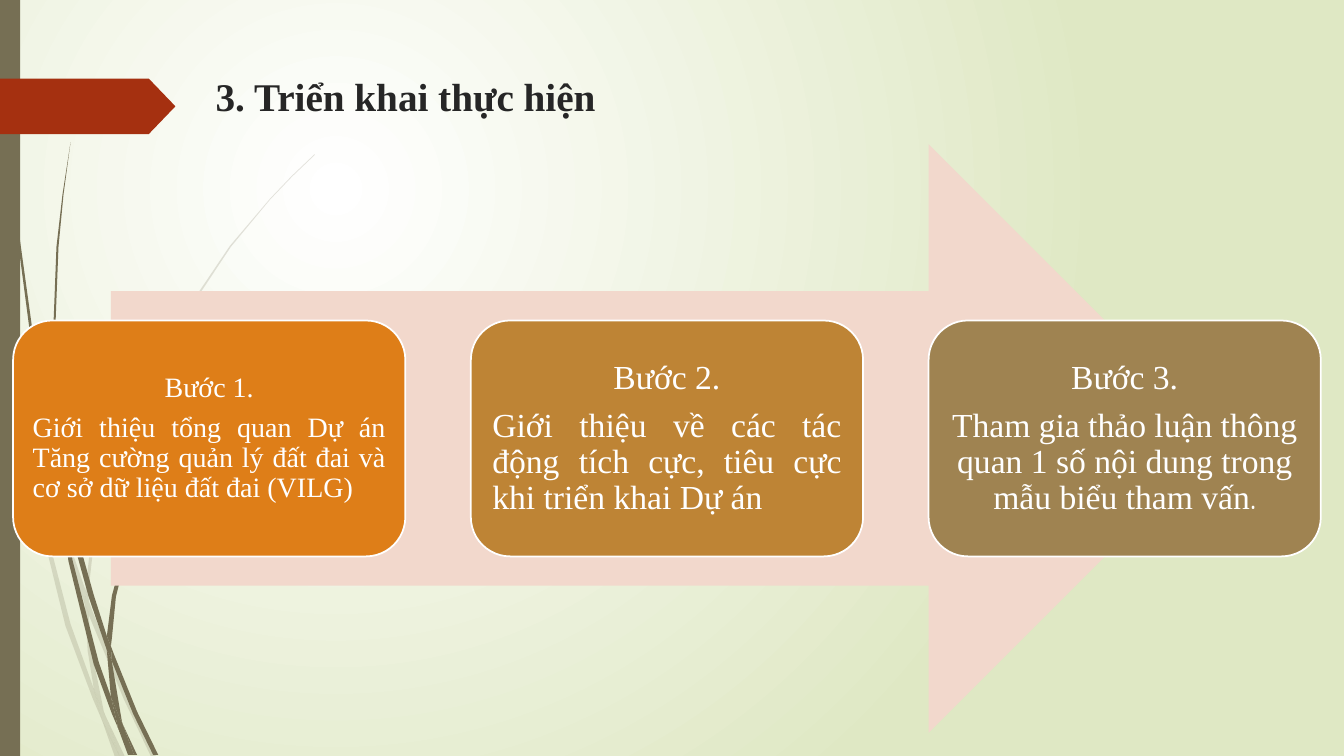
from dataclasses import dataclass

from lxml import etree
from pptx import Presentation
from pptx.dml.color import RGBColor
from pptx.enum.shapes import MSO_SHAPE
from pptx.enum.text import MSO_ANCHOR, PP_ALIGN
from pptx.oxml.ns import qn
from pptx.util import Inches, Pt

RECTANGLE = MSO_SHAPE.RECTANGLE
ROUNDED = MSO_SHAPE.ROUNDED_RECTANGLE
RIGHT_ARROW = MSO_SHAPE.RIGHT_ARROW
PENTAGON = MSO_SHAPE.PENTAGON
CENTER, JUSTIFY, LEFT = PP_ALIGN.CENTER, PP_ALIGN.JUSTIFY, PP_ALIGN.LEFT
MIDDLE = MSO_ANCHOR.MIDDLE

SERIF = "Times New Roman"
WHITE, OLIVE, RED, INK = "FFFFFF", "766F54", "A53010", "262626"
CARD_LEFT, CARD_PITCH = 0.13, 4.54
UNITS_PER_INCH = 100

Outline = list[tuple[float, float]]


@dataclass
class Grass:
    """A tuft of grass, made of outlines in inches that share one opacity."""
    outlines: list[Outline]
    opacity: int


@dataclass
class Card:
    heading: str
    body: str
    fill: str
    size: int
    inset: float
    align: PP_ALIGN
    ending: str = ""


PALE_GRASS = Grass([
    [(0.11, 3.5), (0.09, 3.22), (0, 2.82), (0, 2.99), (0.1, 3.44)],
    [(0.58, 5.22), (0.84, 5.99), (0.85, 5.86), (0.62, 5.2), (0.36, 4.38),
     (0.14, 3.45), (0.17, 3.76), (0.36, 4.51)],
    [(0.92, 6.07), (0.88, 5.96), (0.88, 6.1), (1.23, 6.94), (1.5, 7.51),
     (1.55, 7.51), (1.27, 6.92)],
    [(1.19, 7.51), (1.24, 7.51), (1.05, 7.11)],
    [(0.93, 6.83), (0.7, 6.19), (0.31, 4.69), (0.17, 3.76), (0.11, 3.5),
     (0.28, 4.7), (0.65, 6.21), (0.92, 6.93), (1.01, 7.14), (0.99, 7.07)],
    [(0.84, 5.99), (0.87, 6.46), (0.93, 6.83), (0.96, 6.92), (1.05, 7.11),
     (1.03, 7.06), (0.91, 6.46), (0.88, 6.1), (0.88, 6.08)],
    [(0.88, 5.84), (0.95, 5.22), (1.1, 4.62), (1.6, 3.49), (2.29, 2.45),
     (2.68, 1.98), (2.9, 1.75), (3.12, 1.54), (3.12, 1.53), (2.89, 1.75),
     (2.68, 1.97), (2.28, 2.44), (1.58, 3.48), (1.07, 4.61), (0.92, 5.21),
     (0.85, 5.84), (0.85, 5.86), (0.88, 5.96)],
    [(1.01, 7.14), (1.14, 7.51), (1.19, 7.51)],
    [(0.88, 6.08), (0.88, 6.1), (0.88, 5.96), (0.85, 5.86), (0.84, 5.99)],
    [(0.96, 6.92), (0.93, 6.83), (0.99, 7.07), (1.01, 7.14), (1.19, 7.51),
     (1.05, 7.11)],
], 20)

DARK_GRASS = Grass([
    [(0.07, 1.1), (0.17, 2.33), (0.33, 3.55), (0.56, 4.77), (0.57, 4.81),
     (0.55, 4.57), (0.55, 4.53), (0.36, 3.55), (0.19, 2.32), (0.08, 1.09),
     (0.05, 0.48), (0.04, 0), (0.03, 0), (0.04, 0.48)],
    [(0.88, 5.92), (1.06, 6.45), (1.06, 6.33), (1.06, 6.31), (0.93, 5.9),
     (0.6, 4.72), (0.64, 5.05)],
    [(1.13, 6.49), (1.1, 6.41), (1.11, 6.56), (1.32, 7.08), (1.52, 7.49),
     (1.57, 7.49), (1.36, 7.06)],
    [(1.1, 6.91), (0.98, 6.57), (0.72, 5.56), (0.64, 5.05), (0.57, 4.77),
     (0.68, 5.57), (0.93, 6.59), (1.11, 7.08), (1.17, 7.22), (1.16, 7.17)],
    [(0.6, 4.72), (0.58, 4.53), (0.54, 3.49), (0.58, 2.45), (0.63, 1.93),
     (0.7, 1.41), (0.62, 1.93), (0.56, 2.45), (0.52, 3.49), (0.55, 4.49)],
    [(1.33, 7.49), (1.36, 7.49), (1.22, 7.19)],
    [(1.11, 6.33), (1.15, 5.92), (1.25, 5.52), (1.58, 4.76), (2.05, 4.06),
     (2.31, 3.74), (2.45, 3.59), (2.61, 3.44), (2.6, 3.44), (2.45, 3.58),
     (2.31, 3.73), (2.04, 4.05), (1.56, 4.74), (1.22, 5.51), (1.11, 5.91),
     (1.06, 6.31), (1.1, 6.41)],
    [(1.17, 7.22), (1.27, 7.49), (1.31, 7.49)],
    [(1.06, 6.45), (1.1, 6.91), (1.16, 7.06), (1.22, 7.19), (1.21, 7.16),
     (1.11, 6.56), (1.09, 6.51)],
    [(1.06, 6.45), (1.09, 6.51), (1.11, 6.56), (1.1, 6.41), (1.06, 6.31)],
    [(1.16, 7.06), (1.1, 6.91), (1.16, 7.17), (1.17, 7.22), (1.3, 7.49),
     (1.33, 7.49), (1.22, 7.19)],
], 100)

CARDS = [
    Card("Bước 1.", "Giới thiệu tổng quan Dự án Tăng cường quản lý đất đai và "
         "cơ sở dữ liệu đất đai (VILG)", "DE7E18", 20, 0.08, JUSTIFY),
    Card("Bước 2.", "Giới thiệu về các tác động tích cực, tiêu cực khi triển "
         "khai Dự án", "BE8435", 24, 0.1, JUSTIFY),
    Card("Bước 3.", "Tham gia thảo luận thông quan 1 số nội dung trong mẫu "
         "biểu tham vấn", "9F8351", 24, 0.1, CENTER, "."),
]


def color(code: str) -> RGBColor:
    return RGBColor.from_string(code)


def paint(shape, fill: str, line: str | None = None, opacity: int = 100) -> None:
    shape.shadow.inherit = False
    shape.fill.solid()
    shape.fill.fore_color.rgb = color(fill)
    if opacity < 100:
        tint = shape.element.spPr.find(".//" + qn("a:srgbClr"))
        etree.SubElement(tint, qn("a:alpha")).set("val", str(opacity * 1000))
    if line:
        shape.line.color.rgb = color(line)
        shape.line.width = Pt(1.25)
    else:
        shape.line.fill.background()


def add_block(page, kind, left: float, top: float, width: float, height: float,
              fill: str, line: str | None = None):
    shape = page.shapes.add_shape(kind, Inches(left), Inches(top),
                                  Inches(width), Inches(height))
    paint(shape, fill, line)
    return shape


def add_span(para, text: str, *, size: float, ink: str, font: str = SERIF,
             bold: bool = False) -> None:
    span = para.add_run()
    span.text = text
    span.font.name = font
    span.font.size = Pt(size)
    span.font.bold = bold
    span.font.color.rgb = color(ink)


def add_grass(page, grass: Grass) -> None:
    for outline in grass.outlines:
        points = [(round(x * UNITS_PER_INCH), round(y * UNITS_PER_INCH))
                  for x, y in outline]
        builder = page.shapes.build_freeform(
            *points[0], scale=Inches(1) / UNITS_PER_INCH)
        builder.add_line_segments(points[1:], close=True)
        paint(builder.convert_to_shape(), OLIVE, opacity=grass.opacity)


def add_card(page, card: Card, left: float) -> None:
    box = add_block(page, ROUNDED, left, 3.18, 3.89, 2.34, card.fill, WHITE)
    frame = box.text_frame
    frame.word_wrap = True
    frame.vertical_anchor = MIDDLE
    frame.margin_left = frame.margin_right = Inches(card.inset)
    frame.margin_top = frame.margin_bottom = Inches(card.inset)
    heading, body = frame.paragraphs[0], frame.add_paragraph()
    for para, text, align in ((heading, card.heading, CENTER),
                              (body, card.body, card.align)):
        para.alignment = align
        para.line_spacing = 0.9
        para.space_after = Pt(card.size * 0.35)
        add_span(para, text, size=card.size, ink=WHITE)
    if card.ending:
        add_span(body, card.ending, size=card.size, ink=WHITE, font="Quicksand")


def add_title(page, text: str) -> None:
    box = page.shapes.add_textbox(Inches(2.04), Inches(0.65),
                                  Inches(9.75), Inches(0.61))
    box.text_frame.word_wrap = True
    box.text_frame.vertical_anchor = MIDDLE
    para = box.text_frame.paragraphs[0]
    para.alignment = LEFT
    add_span(para, text, size=28, ink=INK, bold=True)


def set_radial_background(page, inner: str, outer: str) -> None:
    fill = page.background.fill
    fill.gradient()
    for stop, code in zip(fill.gradient_stops, (inner, outer)):
        stop.color.rgb = color(code)
    gradient = page.element.find(".//" + qn("a:gradFill"))
    gradient.remove(gradient.find(qn("a:lin")))
    circle = etree.SubElement(gradient, qn("a:path"))
    circle.set("path", "circle")
    focus = etree.SubElement(circle, qn("a:fillToRect"))
    for side, percent in zip("ltrb", (50, 50, 100, 100)):
        focus.set(side, str(percent * 1000))


def main() -> None:
    deck = Presentation()
    deck.slide_width, deck.slide_height = Inches(13.33), Inches(7.5)
    page = deck.slides.add_slide(deck.slide_layouts[6])
    set_radial_background(page, WHITE, "DFE8C4")
    for grass in (PALE_GRASS, DARK_GRASS):
        add_grass(page, grass)
    add_block(page, RECTANGLE, 0, 0, 0.2, 7.5, OLIVE)
    marker = add_block(page, PENTAGON, 0, 0.78, 1.74, 0.55, RED)
    marker.adjustments[0] = 0.48
    add_title(page, "3. Triển khai thực hiện")
    add_block(page, RIGHT_ARROW, 1.1, 1.43, 11.03, 5.84, "F2D8CC")
    for index, card in enumerate(CARDS):
        add_card(page, card, CARD_LEFT + index * CARD_PITCH)
    deck.save("out.pptx")


if __name__ == "__main__":
    main()
